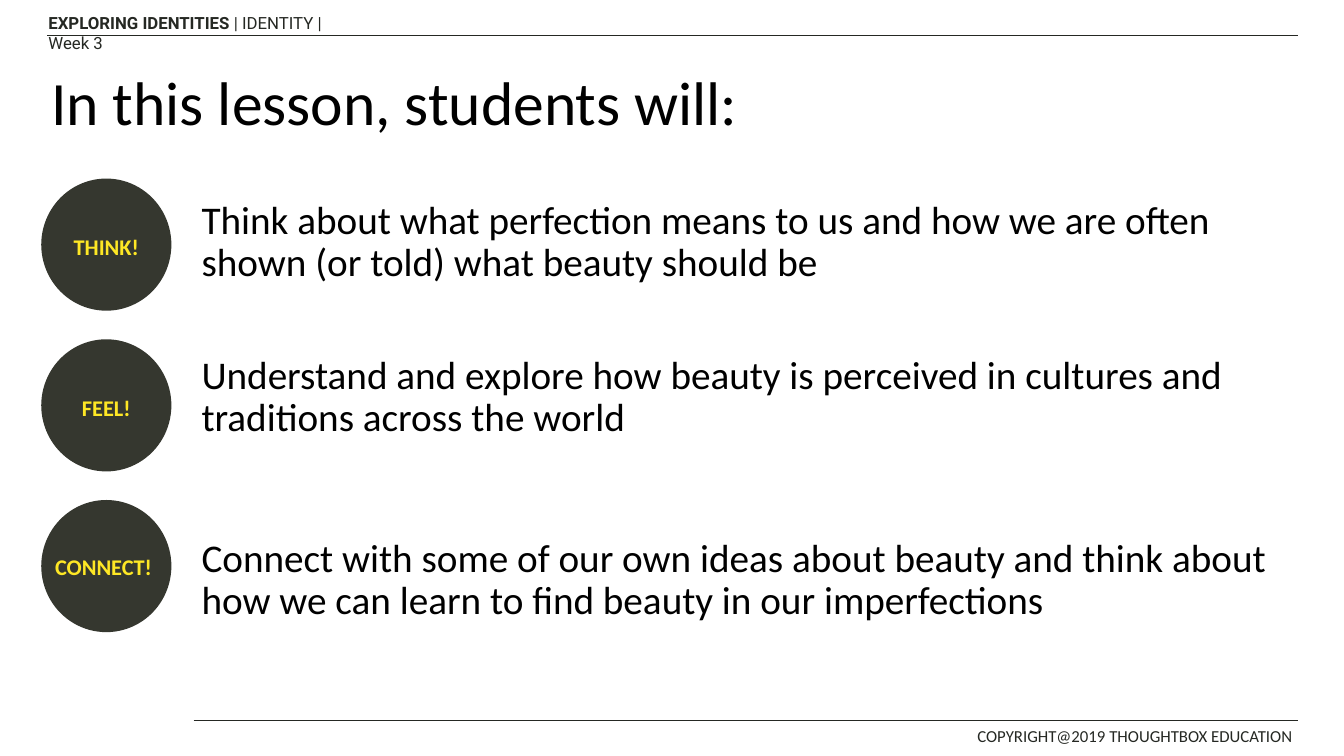
from lxml import etree
from pptx import Presentation
from pptx.dml.color import RGBColor
from pptx.enum.shapes import MSO_CONNECTOR, MSO_SHAPE
from pptx.enum.text import MSO_ANCHOR as Anchor, PP_ALIGN as Align
from pptx.oxml.ns import qn
from pptx.util import Cm, Pt

INK = RGBColor(0x25, 0x28, 0x23)
BLACK = RGBColor(0, 0, 0)
CHARCOAL = RGBColor(0x35, 0x37, 0x2F)
YELLOW = RGBColor(0xFE, 0xE7, 0x25)


def style(para, size, color, name="Calibri", bold=False):
    font = para.font
    font.name, font.size, font.bold = name, Pt(size), bold
    font.color.rgb = color


def add_text_box(left, top, width, height, text, size, color, bold=False):
    """Add a wrapping one-paragraph text box and return its text frame."""
    box = page.shapes.add_textbox(Cm(left), Cm(top), Cm(width), Cm(height))
    frame = box.text_frame
    frame.word_wrap = True
    frame.text = text
    style(frame.paragraphs[0], size, color, bold=bold)
    return frame


deck = Presentation()
deck.slide_width, deck.slide_height = Cm(33.87), Cm(19.05)
page = deck.slides.add_slide(deck.slide_layouts[6])

# Header and footer
header = add_text_box(0.97, 0.2, 8.2, 0.76, "", 12, INK).paragraphs[0]
style(header, 12, INK, name="Roboto")
course = header.add_run()
course.text = "EXPLORING IDENTITIES"
course.font.bold = True
header.add_run().text = " | IDENTITY | Week 3"

add_text_box(24.38, 18.16, 8.64, 0.78, "COPYRIGHT@2019 THOUGHTBOX EDUCATION", 12, INK)

for start, y in [(1.19, 0.89), (4.88, 18.16)]:
    rule = page.shapes.add_connector(
        MSO_CONNECTOR.STRAIGHT, Cm(start), Cm(y), Cm(32.72), Cm(y))
    rule.line.color.rgb = INK
    rule.line.width = Pt(1)
    etree.SubElement(rule._element.spPr, qn("a:effectLst"))

# Title
title = add_text_box(1.04, 0.81, 29.21, 3.68, "In this lesson, students will:", 44, BLACK)
title.vertical_anchor = Anchor.MIDDLE
title.paragraphs[0].line_spacing = 0.9

# Lesson goals, with the gap in points before each
goals = [
    ("Think about what perfection means to us and how we are often "
     "shown (or told) what beauty should be", 0),
    ("Understand and explore how beauty is perceived in cultures and "
     "traditions across the world", 50),
    ("Connect with some of our own ideas about beauty and think about "
     "how we can learn to find beauty in our imperfections", 70.5),
]
body = add_text_box(4.83, 4.93, 27.71, 12.09, goals[0][0], 28, BLACK)
for text, gap in goals[1:]:
    goal = body.add_paragraph()
    goal.text = text
    goal.space_before = Pt(gap)
    style(goal, 28, BLACK)
for goal in body.paragraphs:
    goal.line_spacing = 0.9

# Circles; the last label is too wide for its circle and has its own box
for row, label in enumerate(["THINK!", "FEEL!", ""]):
    circle = page.shapes.add_shape(
        MSO_SHAPE.OVAL, Cm(1.04), Cm(4.5 + 4.05 * row), Cm(3.28), Cm(3.33))
    circle.shadow.inherit = False
    circle.fill.solid()
    circle.fill.fore_color.rgb = CHARCOAL
    circle.line.fill.background()
    if label:
        circle.text_frame.text = label
        circle.text_frame.vertical_anchor = Anchor.MIDDLE
        para = circle.text_frame.paragraphs[0]
        para.alignment = Align.CENTER
        para.line_spacing = 1.15
        para.space_after = Pt(10)
        style(para, 16, YELLOW, bold=True)

add_text_box(1.14, 13.82, 3.05, 0.94, "CONNECT!", 16, YELLOW, bold=True)

deck.save("out.pptx")
